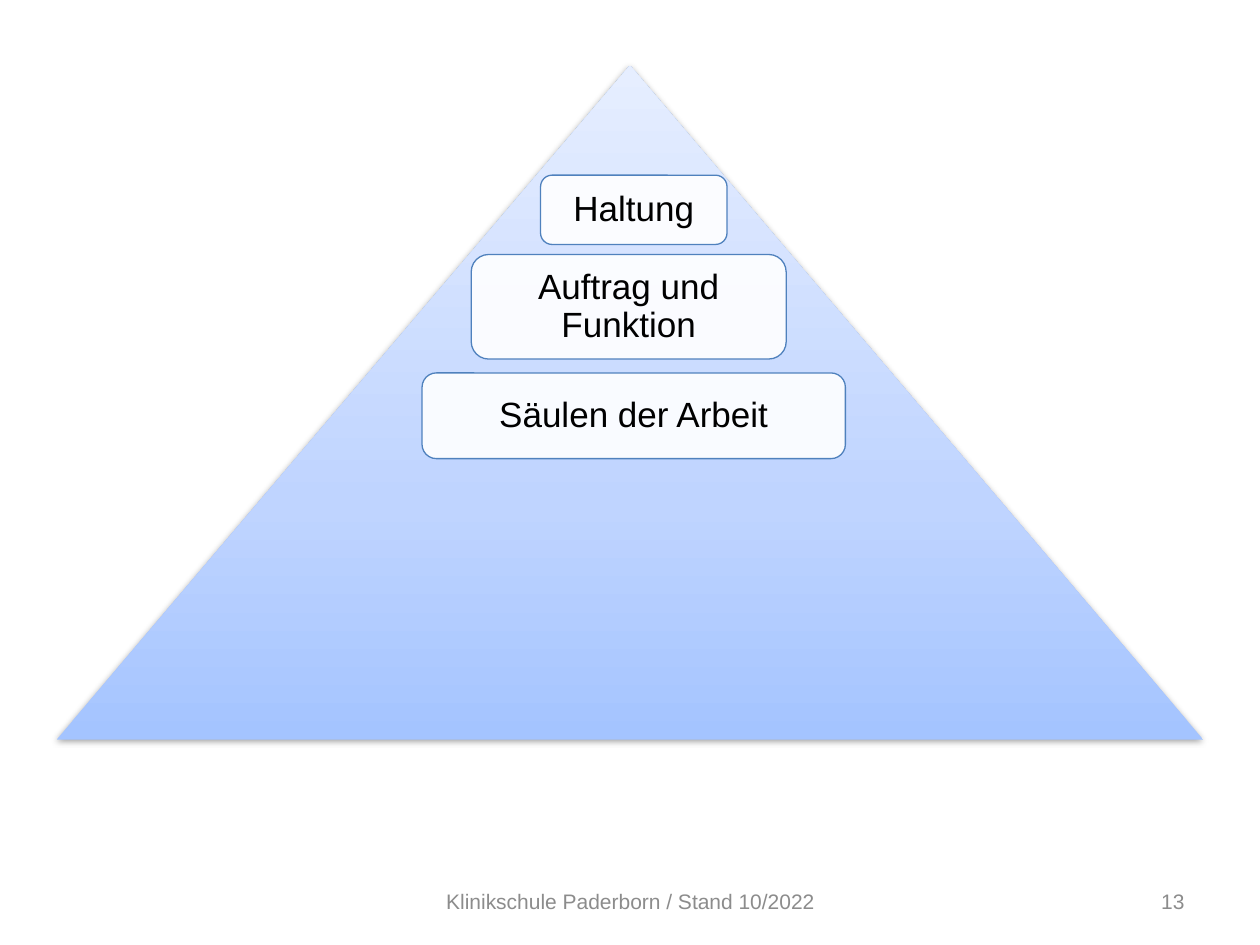
import copy

import lxml.etree
import pptx
import pptx.dml.color
import pptx.enum.shapes
import pptx.enum.text
import pptx.oxml
import pptx.oxml.ns
import pptx.util
from pptx.util import Inches

qn = pptx.oxml.ns.qn
ALIGN = pptx.enum.text.PP_ALIGN
SHAPE = pptx.enum.shapes.MSO_SHAPE


def color(value):
    return pptx.dml.color.RGBColor.from_string(value)


def write(box, text, size, text_color, align):
    frame = box.text_frame
    frame.text = text
    frame.word_wrap = True
    frame.vertical_anchor = pptx.enum.text.MSO_ANCHOR.MIDDLE
    para = frame.paragraphs[0]
    para.alignment = align
    span = para.runs[0]
    span.font.name = "Arial"
    span.font.size = pptx.util.Pt(size)
    span.font.color.rgb = color(text_color)
    return frame


deck = pptx.Presentation()
deck.slide_width, deck.slide_height = Inches(10), Inches(7.5)
page = deck.slides.add_slide(deck.slide_layouts[6])

# Pyramid, darkest at the base
pyramid = page.shapes.add_shape(
    SHAPE.ISOSCELES_TRIANGLE, Inches(0.45), Inches(0.52), Inches(9.1), Inches(5.35))
pyramid.line.fill.background()
pyramid.fill.gradient()
pyramid.fill.gradient_angle = 90
stop_list = pyramid.element.spPr.find(".//" + qn("a:gsLst"))
stop_list.insert(1, copy.deepcopy(stop_list[0]))
stops = [(0, "A4C4FF"), (0.35, "BFD4FF"), (1, "E6EEFF")]
for stop, (position, value) in zip(pyramid.fill.gradient_stops, stops):
    stop.position = position
    stop.color.rgb = color(value)

# Soft shadow below the pyramid
pyramid.shadow.inherit = False
effects = pyramid.element.spPr.find(qn("a:effectLst"))
shadow = lxml.etree.SubElement(
    effects, qn("a:outerShdw"), blurRad=str(pptx.util.Pt(3.1)),
    dist=str(pptx.util.Pt(1.6)), dir="5400000", rotWithShape="0")
shadow_color = lxml.etree.SubElement(shadow, qn("a:srgbClr"), val="000000")
lxml.etree.SubElement(shadow_color, qn("a:alpha"), val="38000")

# Levels of the pyramid
levels = [
    ("Haltung", 4.29, 1.39, 1.48, 0.55),
    ("Auftrag und Funktion", 3.74, 2.02, 2.5, 0.83),
    ("Säulen der Arbeit", 3.35, 2.96, 3.36, 0.68),
]
for text, left, top, width, height in levels:
    level = page.shapes.add_shape(
        SHAPE.ROUNDED_RECTANGLE, Inches(left), Inches(top), Inches(width), Inches(height))
    level.shadow.inherit = False
    level.fill.solid()
    level.fill.fore_color.rgb = color("FFFFFF")
    fill_color = level.element.spPr.find(qn("a:solidFill"))[0]
    lxml.etree.SubElement(fill_color, qn("a:alpha"), val="90000")
    level.line.color.rgb = color("4F81BD")
    level.line.width = pptx.util.Pt(0.75)
    frame = write(level, text, 20, "000000", ALIGN.CENTER)
    frame.paragraphs[0].line_spacing = 0.9
    frame.margin_left = frame.margin_right = Inches(0.08)
    frame.margin_top = frame.margin_bottom = Inches(0.08)

# Footer and page number
footers = [
    ("Klinikschule Paderborn / Stand 10/2022", 3.42, 3.17, ALIGN.CENTER),
    ("13", 7.17, 2.33, ALIGN.RIGHT),
]
for text, left, width, align in footers:
    footer = page.shapes.add_textbox(Inches(left), Inches(6.95), Inches(width), Inches(0.4))
    write(footer, text, 12, "8C8C8C", align)

deck.save("out.pptx")
